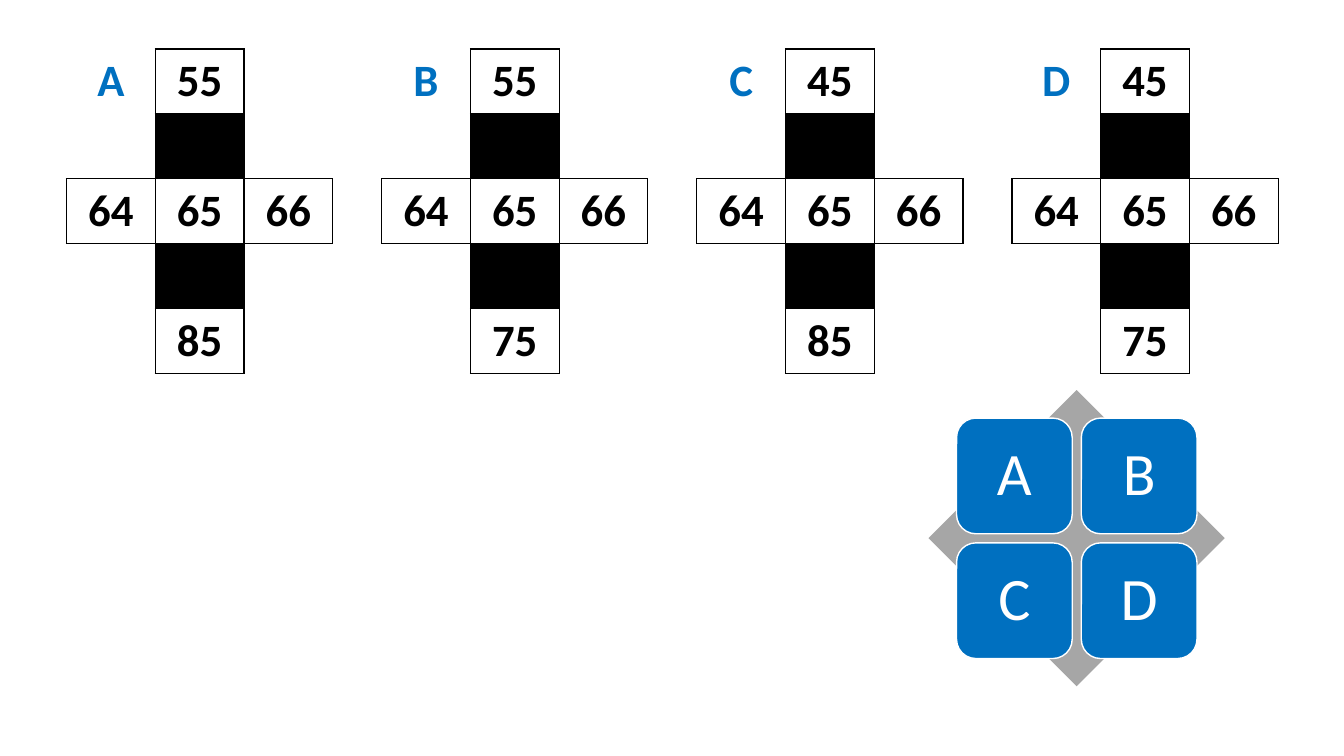
import pptx
import pptx.dml.color
import pptx.enum.shapes
import pptx.enum.text
import pptx.oxml
import pptx.oxml.ns
import pptx.util
from lxml import etree

Pt = pptx.util.Pt
SHAPE = pptx.enum.shapes.MSO_SHAPE
CENTER = pptx.enum.text.PP_ALIGN.CENTER
MIDDLE = pptx.enum.text.MSO_ANCHOR.MIDDLE

BLUE, BLACK, WHITE, GRAY = "0070C0", "000000", "FFFFFF", "A6A6A6"

# Letter, top number and bottom number of each cross
CROSSES = [("A", 55, 85), ("B", 55, 75), ("C", 45, 85), ("D", 45, 75)]


def rgb(value):
    return pptx.dml.color.RGBColor.from_string(value)


def in_cross(row, col):
    return 0 <= row < 5 and 0 <= col < 3 and (row == 2 or col == 1)


class Deck:
    font = "Calibri"

    def __init__(self, width, height):
        self.prs = pptx.Presentation()
        self.prs.slide_width, self.prs.slide_height = Pt(width), Pt(height)
        self.s = self.prs.slides.add_slide(self.prs.slide_layouts[6])

    def add_text(self, tf, text, color, **formats):
        p = tf.paragraphs[0]
        p.alignment = CENTER
        r = p.add_run()
        r.text = str(text)
        r.font.color.rgb = rgb(color)
        for name, value in {"name": self.font, **formats}.items():
            setattr(r.font, name, value)
        return p

    def shape(self, kind, x, y, size, fill, line=None):
        sp = self.s.shapes.add_shape(kind, Pt(x), Pt(y), Pt(size), Pt(size))
        sp.shadow.inherit = False
        sp.fill.solid()
        sp.fill.fore_color.rgb = rgb(fill)
        if line:
            sp.line.color.rgb = rgb(line)
            sp.line.width = Pt(1)
        else:
            sp.line.fill.background()
        return sp

    def tile(self, x, y, size, letter):
        tf = self.shape(SHAPE.ROUNDED_RECTANGLE, x, y, size, BLUE, WHITE).text_frame
        margins = {f"margin_{side}": Pt(17) for side in ("left", "right", "top", "bottom")}
        for name, value in {"vertical_anchor": MIDDLE, "word_wrap": True, **margins}.items():
            setattr(tf, name, value)
        self.add_text(tf, letter, WHITE, size=Pt(43)).line_spacing = 0.9

    def borders(self, cell, row, col):
        """Draw each edge that touches a cell of the cross, and clear the rest."""
        tcPr = cell._tc.get_or_add_tcPr()
        neighbours = {"lnL": (row, col - 1), "lnR": (row, col + 1),
                      "lnT": (row - 1, col), "lnB": (row + 1, col)}
        for tag, neighbour in neighbours.items():
            ln = etree.SubElement(tcPr, pptx.oxml.ns.qn(f"a:{tag}"), w=str(Pt(1)))
            if in_cross(row, col) or in_cross(*neighbour):
                fill = etree.SubElement(ln, pptx.oxml.ns.qn("a:solidFill"))
                etree.SubElement(fill, pptx.oxml.ns.qn("a:srgbClr"), val=BLACK)
            else:
                etree.SubElement(ln, pptx.oxml.ns.qn("a:noFill"))

    def cross(self, x, y, letter, top, bottom, col_width=63.4, row_height=46.4):
        table = self.s.shapes.add_table(5, 3, Pt(x), Pt(y), Pt(3 * col_width),
                                        Pt(5 * row_height)).table
        table.first_row = table.horz_banding = False
        for column in table.columns:
            column.width = Pt(col_width)
        texts = {(0, 0): letter, (0, 1): top, (2, 0): 64, (2, 1): 65, (2, 2): 66, (4, 1): bottom}
        for i, row in enumerate(table.rows):
            row.height = Pt(row_height)
            for j, cell in enumerate(row.cells):
                self.borders(cell, i, j)
                if in_cross(i, j) and (i, j) not in texts:
                    cell.fill.solid()
                    cell.fill.fore_color.rgb = rgb(BLACK)
                else:
                    cell.fill.background()
                if (i, j) in texts:
                    color = BLACK if in_cross(i, j) else BLUE
                    self.add_text(cell.text_frame, texts[i, j], color, size=Pt(32), bold=True)


def main():
    deck = Deck(960, 540)
    deck.shape(SHAPE.DIAMOND, 663.2, 278.6, 211.6, GRAY)
    for i, (letter, _, _) in enumerate(CROSSES):
        row, col = divmod(i, 2)
        deck.tile(683.3 + 89.1 * col, 298.7 + 89.1 * row, 82.6, letter)
    for i, (letter, top, bottom) in enumerate(CROSSES):
        deck.cross(47.5 + 225.1 * i, 35, letter, top, bottom)
    deck.prs.save("out.pptx")


if __name__ == "__main__":
    main()
